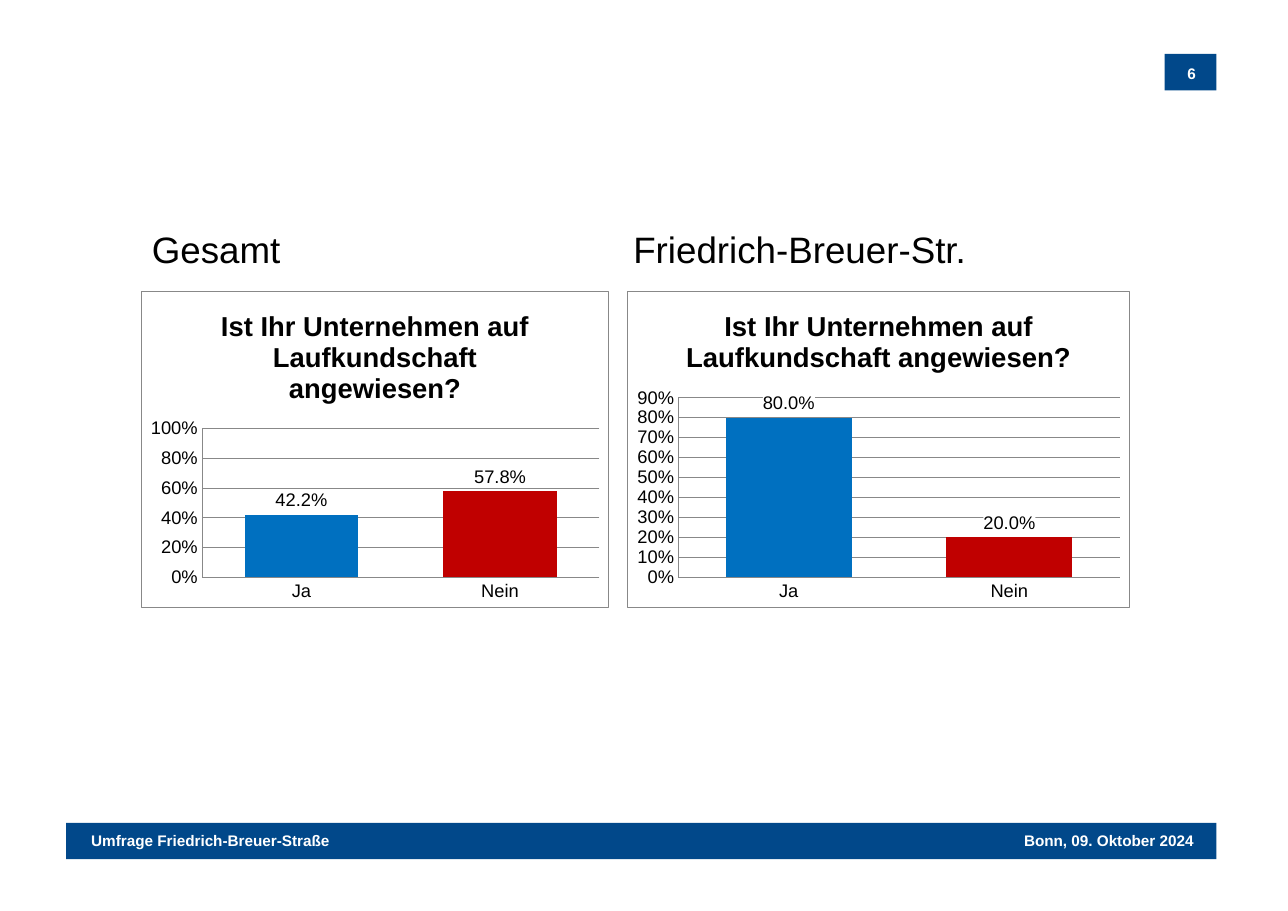
from pptx import Presentation
from pptx.chart.data import CategoryChartData
from pptx.dml.color import RGBColor
from pptx.enum.chart import (XL_CHART_TYPE as ChartType, XL_LABEL_POSITION as LabelPos,
                             XL_TICK_MARK as TickMark)
from pptx.enum.shapes import MSO_SHAPE as Shape
from pptx.enum.text import PP_ALIGN as Align
from pptx.oxml import parse_xml
from pptx.oxml.ns import nsdecls
from pptx.util import Inches, Pt

WIDTH, HEIGHT = Inches(11.69), Inches(8.27)


def color(hex_code):
    return RGBColor.from_string(hex_code)


def style_font(font, size, hex_code, bold=False):
    font.name, font.size, font.bold = "Arial", Pt(size), bold
    font.color.rgb = color(hex_code)


def write(frame, text, size=10, hex_code="FFFFFF", bold=False, align=Align.LEFT):
    paragraph = frame.paragraphs[0]
    paragraph.alignment = align
    run = paragraph.add_run()
    run.text = text
    style_font(run.font, size, hex_code, bold)


def area_format(fill, border=None):
    """Fill and outline of a chart part that has no public format property."""
    line = "<a:noFill/>"
    if border:
        line = f'<a:solidFill><a:srgbClr val="{border}"/></a:solidFill>'
    return parse_xml(
        f'<c:spPr {nsdecls("c", "a")}><a:solidFill><a:srgbClr val="{fill}"/></a:solidFill>'
        f'<a:ln w="{Pt(0.75)}">{line}</a:ln></c:spPr>')


class SurveySlide:
    """Places elements by left, top, width and height in percent of the slide."""
    NAVY, BLACK, WHITE, GRAY = "01488A", "000000", "FFFFFF", "888888"
    ANSWER_COLORS = {"Ja": "0070C0", "Nein": "C00000"}

    def __init__(self, deck):
        self.slide = deck.slides.add_slide(deck.slide_layouts[6])

    def place(self, left, top, width, height):
        return [round(share * size / 100) for share, size in
                zip((left, top, width, height), (WIDTH, HEIGHT) * 2)]

    def bar(self, *area):
        bar = self.slide.shapes.add_shape(Shape.RECTANGLE, *self.place(*area))
        bar.shadow.inherit = False
        bar.fill.solid()
        bar.fill.fore_color.rgb = color(self.NAVY)
        bar.line.fill.background()

    def text(self, text, *area, wrap=True, **text_format):
        frame = self.slide.shapes.add_textbox(*self.place(*area)).text_frame
        frame.word_wrap = wrap
        write(frame, text, **text_format)

    def chart(self, question, shares, top_share, step, *area):
        data = CategoryChartData(number_format="0.0%")
        data.categories = list(self.ANSWER_COLORS)
        data.add_series("Series 1", shares)
        chart = self.slide.shapes.add_chart(
            ChartType.COLUMN_CLUSTERED, *self.place(*area), data).chart
        style_font(chart.font, 10, self.BLACK)
        chart.has_legend = False
        chart.has_title = True
        write(chart.chart_title.text_frame, question, size=18, hex_code=self.BLACK,
              bold=True, align=Align.CENTER)
        chart.chart_title.include_in_layout = False

        # Axes
        answers, percent = chart.category_axis, chart.value_axis
        percent.minimum_scale, percent.maximum_scale = 0, top_share
        percent.major_unit = step
        percent.has_major_gridlines = True
        for axis in (answers, percent):
            axis.major_tick_mark = axis.minor_tick_mark = TickMark.NONE
            style_font(axis.tick_labels.font, 12, self.BLACK)
        percent.tick_labels.number_format = "0%"
        percent.tick_labels.number_format_is_linked = False
        for line in (answers.format.line, percent.format.line,
                     percent.major_gridlines.format.line):
            line.color.rgb = color(self.GRAY)
            line.width = Pt(0.75)

        # Columns and their labels
        plot = chart.plots[0]
        plot.gap_width = 75
        plot.vary_by_categories = False
        columns = plot.series[0]
        columns.format.fill.solid()
        columns.format.fill.fore_color.rgb = color("BBE0E3")
        for index, hex_code in enumerate(self.ANSWER_COLORS.values()):
            fill = columns.points[index].format.fill
            fill.solid()
            fill.fore_color.rgb = color(hex_code)
        labels = columns.data_labels
        labels.show_value = True
        labels.position = LabelPos.OUTSIDE_END
        labels.number_format = "0.0%"
        labels.number_format_is_linked = False
        style_font(labels.font, 12, self.BLACK)

        # White backgrounds and chart frame
        space = chart.element
        space.find(".//{*}dLbls/{*}numFmt").addnext(area_format(self.WHITE))
        space.find(".//{*}plotArea").append(area_format(self.WHITE))
        space.find("{*}chart").addnext(area_format(self.WHITE, self.GRAY))


def main():
    deck = Presentation()
    deck.slide_width, deck.slide_height = WIDTH, HEIGHT
    survey = SurveySlide(deck)

    # Page number
    survey.bar(90.42, 5.93, 4.02, 3.99)
    survey.text("6", 90.33, 6.41, 4.36, 3.26, bold=True, align=Align.CENTER)

    # Footer
    survey.bar(5.13, 90.33, 89.31, 3.99)
    survey.text("Umfrage Friedrich-Breuer-Straße", 6.24, 90.69, 20.44, 3.26,
                wrap=False, bold=True)
    survey.text("Bonn, 09. Oktober 2024", 78.53, 90.69, 14.97, 3.26,
                wrap=False, bold=True, align=Align.RIGHT)

    # Survey results: all businesses beside those of one street
    question = "Ist Ihr Unternehmen auf Laufkundschaft angewiesen?"
    groups = [
        ("Gesamt", 10.95, 10.95, 36.36, (0.422, 0.578), 1, 0.2),
        ("Friedrich-Breuer-Str.", 48.33, 48.67, 39.09, (0.8, 0.2), 0.9, 0.1),
    ]
    for group, heading_left, chart_left, width, shares, top_share, step in groups:
        survey.chart(question, shares, top_share, step, chart_left, 31.92, width, 34.82)
        survey.text(group, heading_left, 24.3, 30.28, 6.05, size=24,
                    hex_code=survey.BLACK)

    deck.save("out.pptx")


if __name__ == "__main__":
    main()
